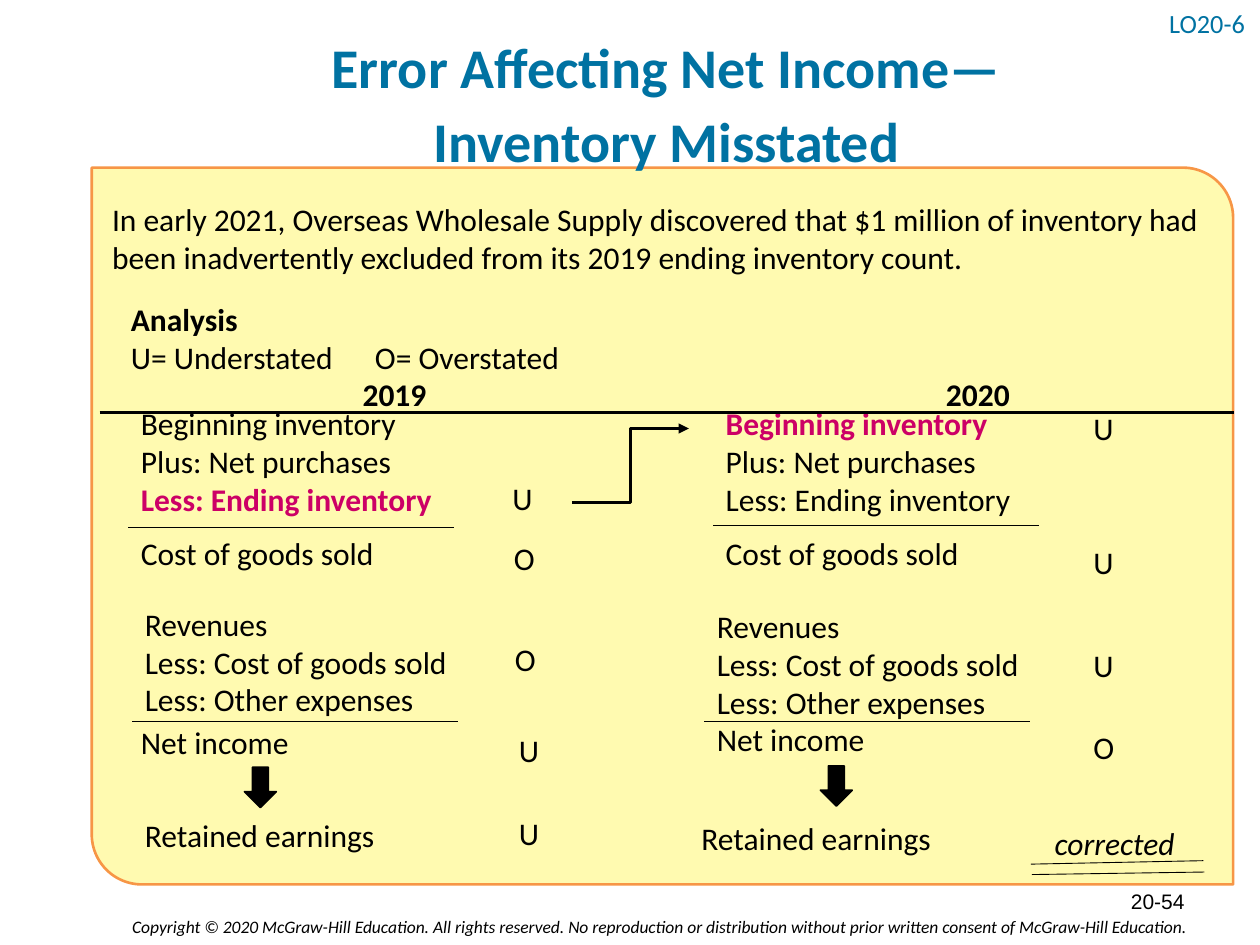
from lxml.etree import SubElement
from pptx import Presentation
from pptx.dml.color import RGBColor
from pptx.enum.shapes import MSO_CONNECTOR, MSO_SHAPE
from pptx.enum.text import MSO_ANCHOR, PP_ALIGN
from pptx.oxml.ns import qn
from pptx.util import Cm, Pt

COLORS = {"ink": "000000", "title": "0072A2", "panel": "FFFAB0",
          "border": "F79646", "accent": "CC0066"}

TITLE = "Error Affecting Net Income—\vInventory Misstated"
INTRO = ("In early 2021, Overseas Wholesale Supply discovered that $1 million of "
         "inventory had been inadvertently excluded from its 2019 ending inventory count.")
LEGEND = ["Analysis", "U= Understated\tO= Overstated"]
COPYRIGHT = ("Copyright © 2020 McGraw-Hill Education. All rights reserved. "
             "No reproduction or distribution without prior written consent of "
             "McGraw-Hill Education.")

COST = ["Beginning inventory", "Plus: Net purchases", "Less: Ending inventory"]
INCOME = ["Revenues", "Less: Cost of goods sold", "Less: Other expenses"]
SOLD, NET, RETAINED = ["Cost of goods sold"], ["Net income"], ["Retained earnings"]

YEARS = [
    {"year": ("2019", 7.06), "accent": "Less: Ending inventory",
     "blocks": [(COST, 2.59, 8.03), (SOLD, 2.59, 10.64), (INCOME, 2.67, 12.07),
                (NET, 2.59, 14.45), (RETAINED, 2.67, 16.33)],
     "marks": [("U", 10.08, 9.53), ("O", 10.11, 10.74), ("O", 10.13, 12.78),
               ("U", 10.21, 14.61), ("U", 10.21, 16.28)],
     "rules": [(2.59, 10.64), (2.67, 14.55)], "arrow": (4.93, 15.47)},
    {"year": ("2020", 18.82), "accent": "Beginning inventory",
     "blocks": [(COST, 14.38, 8.03), (SOLD, 14.38, 10.64), (INCOME, 14.2, 12.12),
                (NET, 14.2, 14.4), (RETAINED, 13.89, 16.38)],
     "marks": [("U", 21.79, 8.13), ("U", 21.79, 10.82), ("U", 21.79, 12.9),
               ("O", 21.79, 14.55)],
     "rules": [(14.38, 10.59), (14.2, 14.55)], "arrow": (16.54, 15.44)},
]
RULE_WIDTH = 6.57
UNDERLINES = [(20.78, 17.42, 24.26, 17.35), (20.8, 17.63, 24.28, 17.58)]


def rgb(name):
    return RGBColor.from_string(COLORS[name])


def add_text(lines, x, y, w, h=1.02, size=18, color="ink", bold=False, italic=False,
             align=PP_ALIGN.LEFT, anchor=MSO_ANCHOR.TOP, spacing=None,
             font="Calibri", accent=None):
    tf = s.shapes.add_textbox(Cm(x), Cm(y), Cm(w), Cm(h)).text_frame
    tf.word_wrap = True
    tf.vertical_anchor = anchor
    tf.text = "\n".join(lines)
    for p in tf.paragraphs:
        p.alignment = align
        p.line_spacing = spacing
        marked = p.text == accent
        for r in p.runs:
            r.font.name, r.font.size = font, Pt(size)
            r.font.bold, r.font.italic = bold or marked, italic
            r.font.color.rgb = rgb("accent" if marked else color)
    return tf


def add_shape(kind, x, y, w, h, fill, line, weight):
    sp = s.shapes.add_shape(kind, Cm(x), Cm(y), Cm(w), Cm(h))
    sp.shadow.inherit = False
    sp.fill.solid()
    sp.fill.fore_color.rgb = rgb(fill)
    sp.line.color.rgb = rgb(line)
    sp.line.width = Pt(weight)
    return sp


def add_line(x1, y1, x2, y2, weight=0.5, kind=MSO_CONNECTOR.STRAIGHT):
    c = s.shapes.add_connector(kind, Cm(x1), Cm(y1), Cm(x2), Cm(y2))
    c.line.color.rgb = rgb("ink")
    c.line.width = Pt(weight)
    SubElement(c._element.spPr, qn("a:effectLst"))
    return c


prs = Presentation()
prs.slide_width, prs.slide_height = Cm(25.4), Cm(19.05)
s = prs.slides.add_slide(prs.slide_layouts[6])

add_text([COPYRIGHT], 1.07, 18.34, 23.09, 0.69, size=10, italic=True,
         align=PP_ALIGN.RIGHT)
panel = add_shape(MSO_SHAPE.ROUND_2_DIAG_RECTANGLE, 1.85, 3.38, 23.01, 14.45,
                  "panel", "border", 1.5)
panel.adjustments[0], panel.adjustments[1] = 0, 0.07
add_text(["LO20-6"], 23.32, 0, 2.08, size=15, color="title",
         anchor=MSO_ANCHOR.MIDDLE, spacing=0.9)
add_text([TITLE], 1.47, 0, 23.93, 4.01, size=32, color="title", bold=True,
         align=PP_ALIGN.CENTER, anchor=MSO_ANCHOR.MIDDLE, spacing=1.1)
add_text([INTRO], 2.01, 3.91, 22.63, 1.8)

legend = add_text(LEGEND, 2.39, 5.92, 10.16, 1.8)
legend.paragraphs[0].runs[0].font.bold = True
tabs = SubElement(legend.paragraphs[1]._p.get_or_add_pPr(), qn("a:tabLst"))
SubElement(tabs, qn("a:tab"), pos=str(Cm(4.92)), algn="l")

for col in YEARS:
    for lines, x, y in col["blocks"]:
        add_text(lines, x, y, 7.42, 2.57 if len(lines) > 1 else 1.02,
                 accent=col["accent"])
    for mark, x, y in col["marks"]:
        add_text([mark], x, y, 1.42)
    for x, y in col["rules"]:
        add_line(x, y, x + RULE_WIDTH, y)
    add_shape(MSO_SHAPE.DOWN_ARROW, *col["arrow"], 0.64, 0.81, "ink", "ink", 1)
    year, x = col["year"]
    add_text([year], x, 7.44, 3.43, bold=True)

add_text(["corrected"], 21.01, 16.48, 3.81, italic=True)
for ends in UNDERLINES:
    add_line(*ends)

carry = add_line(11.53, 10.13, 13.89, 8.64, 1.5, MSO_CONNECTOR.ELBOW)
SubElement(carry.line._get_or_add_ln(), qn("a:tailEnd"), type="triangle")
add_line(2.01, 8.31, 24.87, 8.31, 1.5)
add_text(["20-54"], 18.21, 17.65, 5.92, size=12, font="Arial",
         align=PP_ALIGN.RIGHT, anchor=MSO_ANCHOR.MIDDLE)

prs.save("out.pptx")
